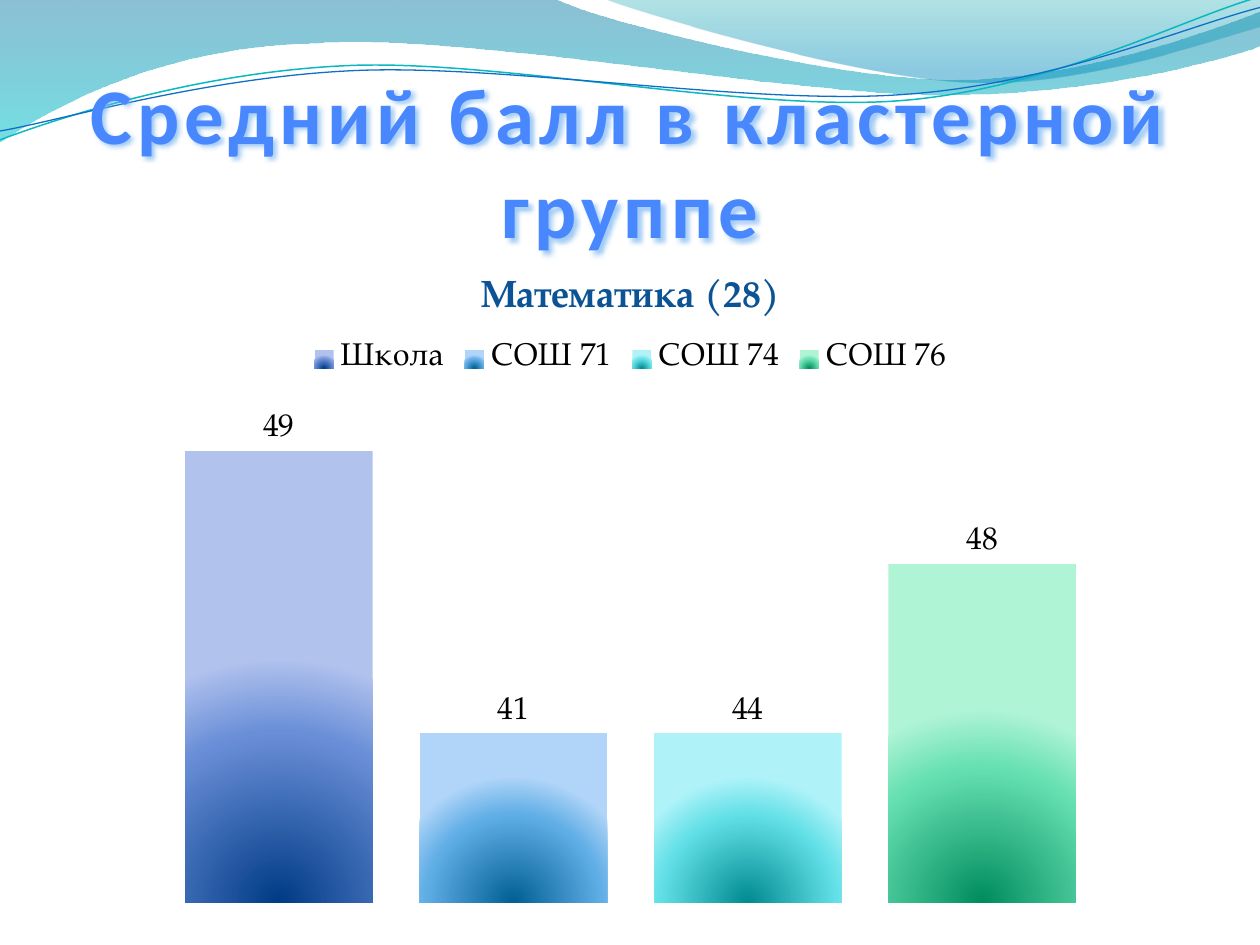
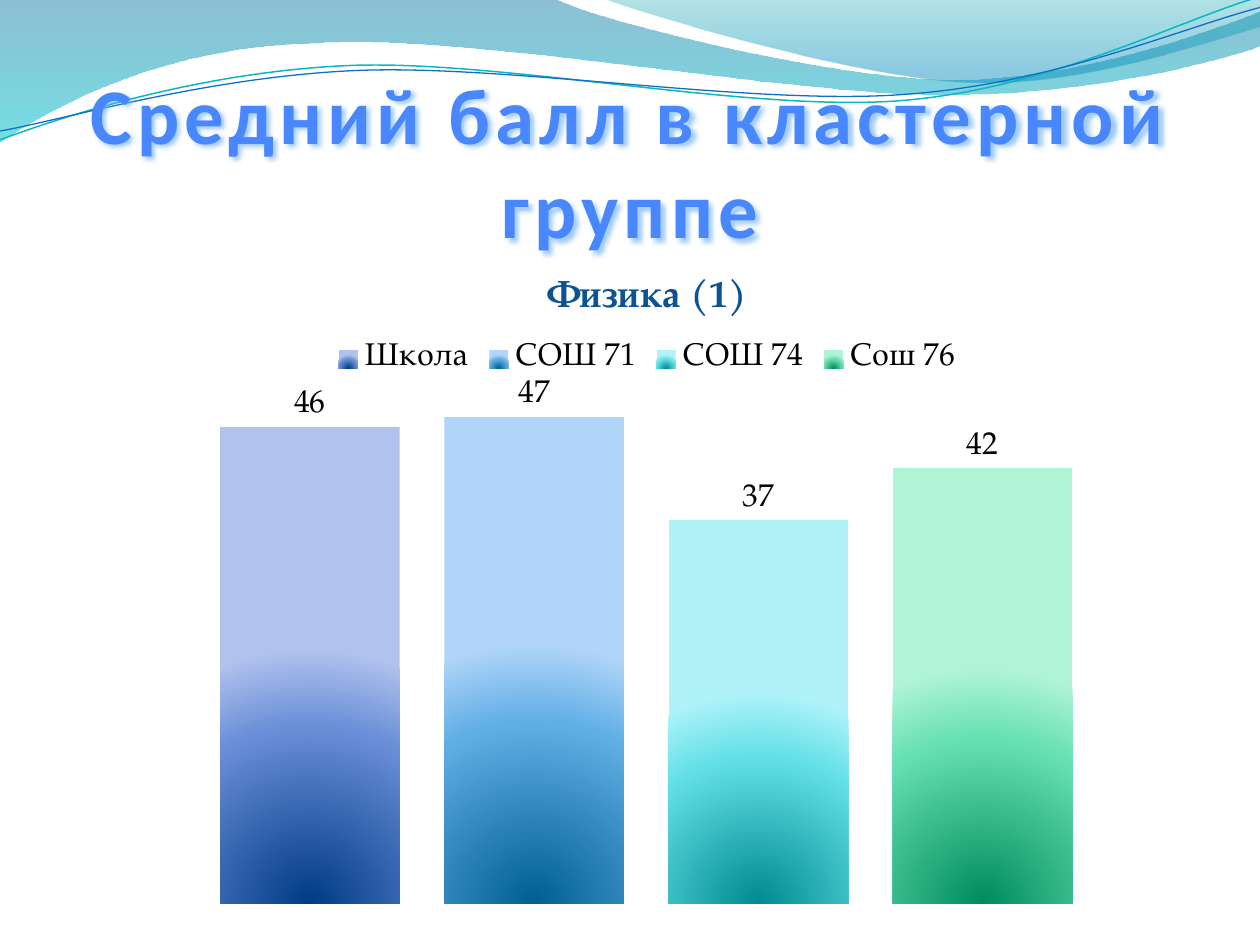
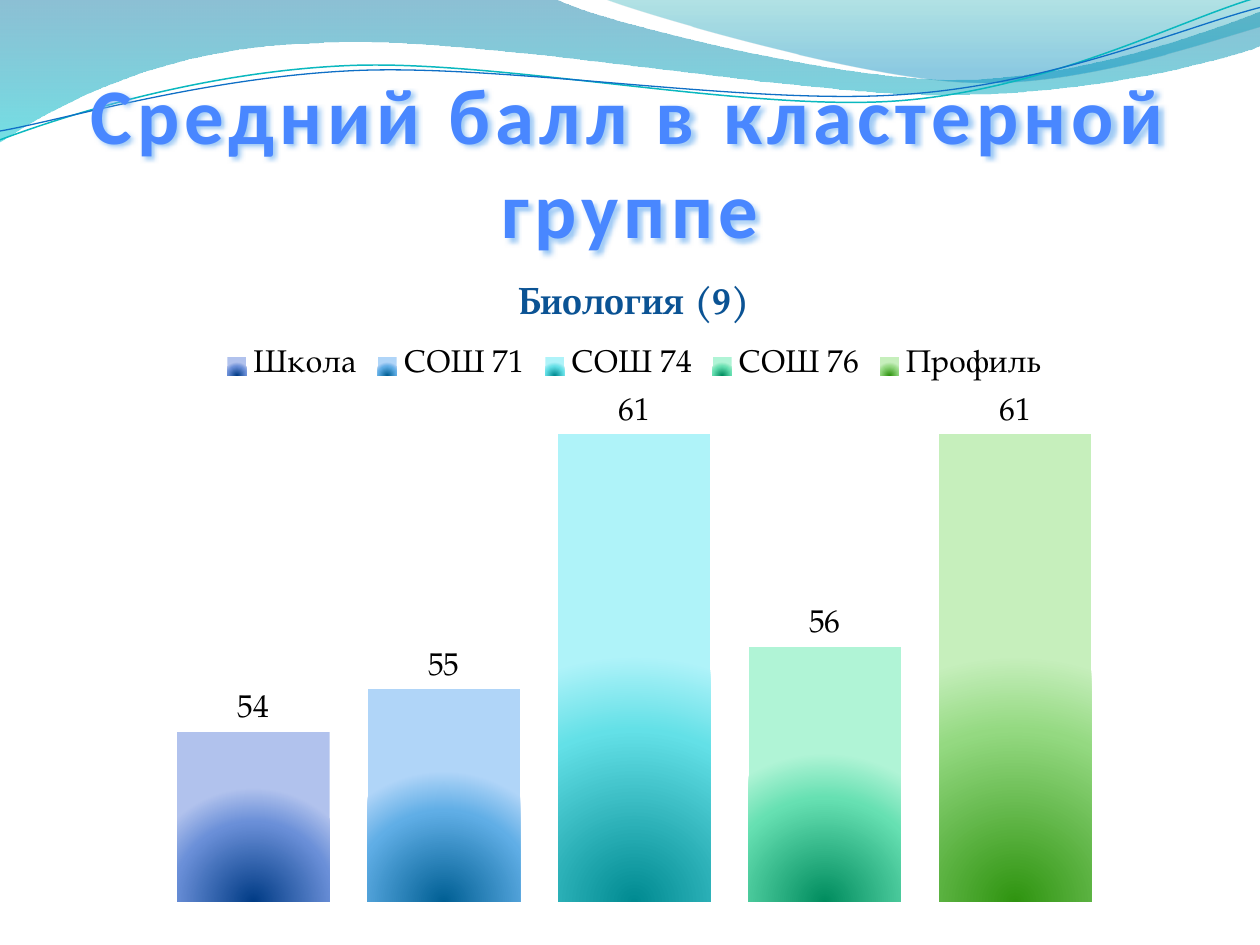
from math import cos, radians, sin

from pptx import Presentation
from pptx.chart.data import CategoryChartData as ChartData
from pptx.dml.color import RGBColor as RGB
from pptx.enum.chart import XL_CHART_TYPE as Kind
from pptx.enum.chart import XL_LABEL_POSITION as Spot
from pptx.enum.chart import XL_LEGEND_POSITION as Side
from pptx.enum.text import MSO_ANCHOR as Anchor
from pptx.enum.text import MSO_AUTO_SIZE as Fit
from pptx.enum.text import PP_ALIGN as Align
from pptx.oxml import parse_xml
from pptx.oxml.ns import nsdecls, qn
from pptx.util import Inches, Pt

HEX = {
    "top": "4987FF", "base": "00539E", "edge": "F4F5FA", "glow": "6FB0F0",
    "head": "0B5394", "text": "000000", "teal": "0AB8BF", "blue": "0F6FC6",
}
TITLE = "Средний балл в кластерной группе"
FONT = "TeX Gyre Pagella"
TILT = 2.7

BARS = [
    ("003B85", "6A8FD8", "B1C2ED"),
    ("005F94", "60AEE6", "B0D5F8"),
    ("008A91", "63E0E7", "AFF3F9"),
    ("008C5E", "66E0B2", "B0F4D6"),
    ("2F9410", "94D981", "C6EFBC"),
]

CHARTS = [
    {"head": "Математика (28)", "box": (0.16, 1.97, 9.69, 5.3), "range": (38, 47),
     "rows": [("Школа", 46, "49"), ("СОШ 71", 41, "41"),
              ("СОШ 74", 41, "44"), ("СОШ 76", 44, "48")]},
    {"head": "Физика (1)", "box": (0.5, 1.97, 9.27, 5.3), "range": (0, 50),
     "plot": (0.68, 3.06, 8.9, 4.11),
     "rows": [("Школа", 46, "46"), ("СОШ 71", 47, "47"),
              ("СОШ 74", 37, "37"), ("Сош 76", 42, "42")]},
    {"head": "Биология (9)", "box": (0.31, 2.03, 9.45, 5.23), "range": (50, 62),
     "plot": (0.5, 3.11, 9.07, 4.05),
     "rows": [("Школа", 54, "54"), ("СОШ 71", 55, "55"), ("СОШ 74", 61, "61"),
              ("СОШ 76", 56, "56"), ("Профиль", 61, "61")]},
]

BANDS = [
    {"start": (0, 0), "stops": [(0, "0074A1", 45), (100, "00C6CF", 55)],
     "steps": [(4.4, -0.01), (4.76, 0.17, 6.64, 0.63, 7.58, 0.63),
               (8.53, 0.63, 9.58, 0.26, 10, 0.09), (10.01, 0.36),
               (9.83, 0.44, 8.7, 0.76, 7.46, 0.75),
               (6.22, 0.75, 3.82, 0.28, 2.57, 0.34),
               (1.29, 0.36, 0.46, 0.83, -0.01, 1.13), (0, 0)]},
    {"start": (4.79, -0.01), "stops": [(0, "00A1A9", 30), (80, "008BBF", 45)],
     "steps": [(5.09, 0.11, 6.82, 0.62, 7.69, 0.65),
               (8.56, 0.69, 9.61, 0.32, 10, 0.21), (10, 0), (4.79, -0.01)]},
    {"start": (0, 1.11), "line": ("teal", 0.85), "hub": (4.99, 0.58),
     "steps": [(0.48, 0.93, 1.58, 0.57, 2.77, 0.52),
               (3.95, 0.47, 5.93, 0.89, 7.13, 0.8),
               (8.33, 0.71, 9.38, 0.15, 9.98, -0.02)]},
    {"start": (0, 1.04), "line": ("blue", 0.75), "hub": (5, 0.59),
     "steps": [(0.47, 0.96, 1.64, 0.61, 2.83, 0.56),
               (4.03, 0.51, 5.97, 0.84, 7.17, 0.75),
               (8.36, 0.67, 9.41, 0.21, 10, 0.06)]},
]
LINEAR = '<a:lin ang="5400000" scaled="0"/>'
RADIAL = ('<a:path path="circle"><a:fillToRect l="50000" t="100000" '
          'r="50000" b="0"/></a:path>')


def color(name):
    return RGB.from_string(HEX[name])


def shade(fill, props, stops, mode):
    fill.gradient()
    marks = "".join(
        f'<a:gs pos="{pos * 1000}"><a:srgbClr val="{tone}">'
        f'<a:alpha val="{alpha * 1000}"/></a:srgbClr></a:gs>'
        for pos, tone, alpha in stops)
    grad = parse_xml(f'<a:gradFill {nsdecls("a")} rotWithShape="1">'
                     f'<a:gsLst>{marks}</a:gsLst>{mode}</a:gradFill>')
    props.replace(props.find(qn("a:gradFill")), grad)


def turn(dot, hub):
    if hub is None:
        return dot
    x, y = dot[0] - hub[0], dot[1] - hub[1]
    c, s = cos(radians(TILT)), sin(radians(TILT))
    return hub[0] + x * c - y * s, hub[1] + x * s + y * c


def bend(wave, steps):
    lines = iter(list(wave._element.iter(qn("a:lnTo"))))
    for step in steps:
        group = [next(lines) for _ in range(len(step) // 2)]
        if len(group) == 3:
            curve = parse_xml(f'<a:cubicBezTo {nsdecls("a")}/>')
            group[0].addprevious(curve)
            for line in group:
                curve.append(line[0])
                line.getparent().remove(line)


def add_bands(slide, layout):
    for num, band in enumerate(BANDS):
        hub = band.get("hub")
        dots = [band["start"]]
        for step in band["steps"]:
            dots += zip(step[::2], step[1::2])
        dots = [tuple(map(Inches, turn(dot, hub))) for dot in dots]
        pen = slide.shapes.build_freeform(*dots[0], scale=1.0)
        pen.add_line_segments(dots[1:], close="stops" in band)
        wave = pen.convert_to_shape()
        bend(wave, band["steps"])
        wave.name = f"Wave {num + 1}"
        wave.shadow.inherit = False
        if "stops" in band:
            shade(wave.fill, wave._element.spPr, band["stops"], LINEAR)
            wave.line.fill.background()
        else:
            tone, width = band["line"]
            wave.rotation = 360 - TILT
            wave.fill.background()
            wave.line.color.rgb = color(tone)
            wave.line.width = Pt(width)
        wave._element.nvSpPr.cNvPr.set("id", str(20 + num))
        layout.shapes._spTree.append(wave._element)


def set_title(slide):
    title = slide.shapes.title
    title.left, title.top, title.width, title.height = map(Inches, (0.5, 0.77, 9, 1.25))
    frame = title.text_frame
    frame.text = TITLE
    frame.auto_size = Fit.NONE
    frame.word_wrap = True
    frame.vertical_anchor = Anchor.BOTTOM
    frame.margin_left = frame.margin_right = frame.margin_bottom = 0
    frame.margin_top = Inches(0.05)
    line = frame.paragraphs[0]
    line.alignment = Align.CENTER
    run = line.runs[0]
    run.font.name, run.font.size, run.font.bold = "Calibri", Pt(45), True
    props = run._r.get_or_add_rPr()
    props.set("spc", "300")
    shade(run.font.fill, props, [(10, HEX["top"], 100), (75, HEX["base"], 100)], LINEAR)
    props.insert(0, parse_xml(
        f'<a:ln {nsdecls("a")} w="11430"><a:solidFill>'
        f'<a:srgbClr val="{HEX["edge"]}"/></a:solidFill></a:ln>'))
    title._element.spPr.append(parse_xml(
        f'<a:effectLst {nsdecls("a")}><a:outerShdw blurRad="25400" dist="25400" '
        f'dir="2700000" algn="tl" rotWithShape="0"><a:srgbClr val="{HEX["glow"]}">'
        '<a:alpha val="65000"/></a:srgbClr></a:outerShdw></a:effectLst>'))


def set_font(font, size=18, tone="text", bold=False):
    font.name, font.size, font.bold = FONT, Pt(size), bold
    font.color.rgb = color(tone)


def place_plot(chart, box, plot):
    left, top, width, height = box
    parts = {"x": (plot[0] - left) / width, "y": (plot[1] - top) / height,
             "w": plot[2] / width, "h": plot[3] / height}
    modes = "".join(f'<c:{key}Mode val="edge"/>' for key in "xy")
    sizes = "".join(f'<c:{key} val="{part:.4f}"/>' for key, part in parts.items())
    area = chart._chartSpace.chart.plotArea
    for old in area.findall(qn("c:layout")):
        area.remove(old)
    area.insert(0, parse_xml(
        f'<c:layout {nsdecls("c")}><c:manualLayout><c:layoutTarget val="inner"/>'
        f'{modes}{sizes}</c:manualLayout></c:layout>'))


def add_chart(slide, item):
    data = ChartData()
    data.categories = ["1"]
    for name, value, _ in item["rows"]:
        data.add_series(name, [value])
    chart = slide.shapes.add_chart(
        Kind.COLUMN_CLUSTERED, *map(Inches, item["box"]), data).chart
    set_font(chart.font)
    chart.has_title = True
    head = chart.chart_title.text_frame
    head.text = item["head"]
    set_font(head.paragraphs[0].runs[0].font, 21.6, "head", True)
    chart.has_legend = True
    chart.legend.position = Side.TOP
    chart.legend.include_in_layout = False
    axis = chart.value_axis
    axis.minimum_scale, axis.maximum_scale = item["range"]
    axis.has_major_gridlines = False
    axis.visible = chart.category_axis.visible = False
    if "plot" in item:
        place_plot(chart, item["box"], item["plot"])
    plot = chart.plots[0]
    plot.gap_width, plot.overlap, plot.vary_by_categories = 150, -25, False
    for bar, tones, (_, value, label) in zip(plot.series, BARS, item["rows"]):
        stops = [(pos, tone, 100) for pos, tone in zip((0, 70, 100), tones)]
        fill = bar.format.fill
        fill.gradient()
        shade(fill, bar._element.find(qn("c:spPr")), stops, RADIAL)
        bar.data_labels.show_value = True
        bar.data_labels.position = Spot.OUTSIDE_END
        if label != str(value):
            mark = bar.points[0].data_label
            mark.text_frame.text = label
            set_font(mark.text_frame.paragraphs[0].runs[0].font)
            mark.position = Spot.OUTSIDE_END


def main():
    deck = Presentation()
    deck.slide_width, deck.slide_height = Inches(10), Inches(7.5)
    layout = deck.slide_layouts[5]
    for item in CHARTS:
        slide = deck.slides.add_slide(layout)
        set_title(slide)
        add_chart(slide, item)
    add_bands(slide, layout)
    deck.save("out.pptx")


if __name__ == "__main__":
    main()
